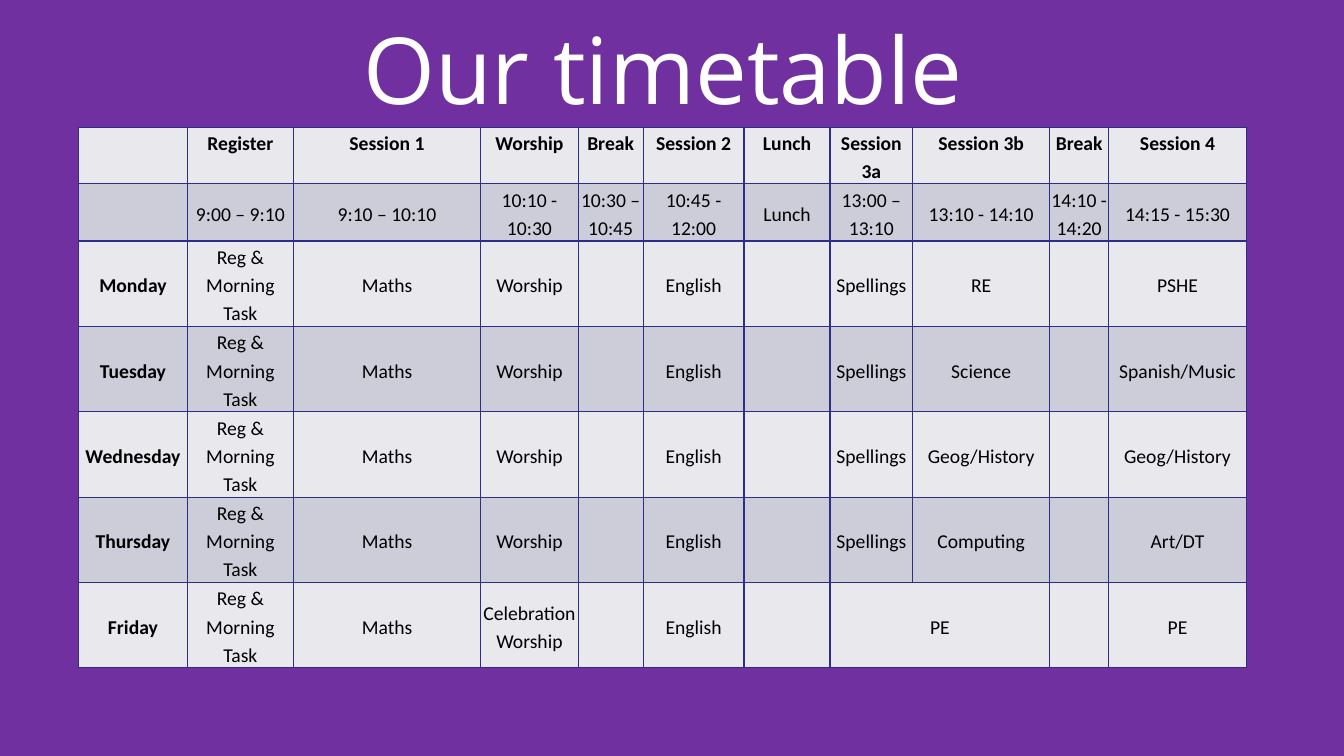
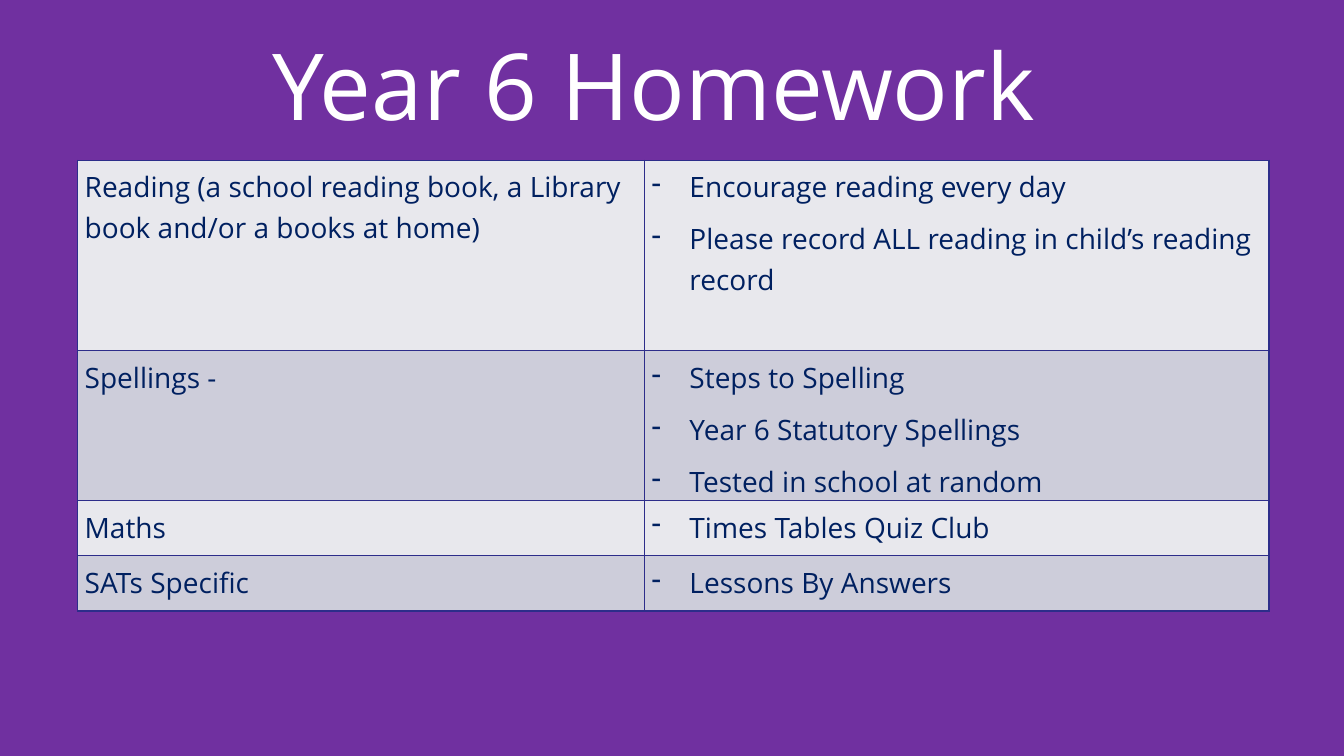
from dataclasses import dataclass

from lxml.etree import SubElement
from pptx import Presentation
from pptx.dml.color import RGBColor
from pptx.enum.text import MSO_ANCHOR, MSO_AUTO_SIZE, PP_ALIGN
from pptx.oxml.ns import qn
from pptx.presentation import Presentation as Deck
from pptx.slide import Slide
from pptx.table import Table, _Cell as Cell
from pptx.util import Pt

PURPLE, WHITE, BLACK, NAVY = "7030A0", "FFFFFF", "000000", "002060"
BORDER, BANDS = "2D2D8A", ("E8E8ED", "CDCDDA")
TITLE_FONT = "Open Sans"


@dataclass(frozen=True)
class CellStyle:
    """The text settings that all cells of one table share."""

    font: str
    size: float
    colour: str
    line_spacing: float
    space_after: float
    align: PP_ALIGN
    inset_side: float = 0
    inset_top: float = 0


@dataclass(frozen=True)
class Grid:
    """The place and the row and column sizes of a table."""

    left: float
    top: float
    columns: tuple[float, ...]
    rows: tuple[float, ...]


TIMETABLE_STYLE = CellStyle("Calibri", 14, BLACK, 1.18, 14, PP_ALIGN.CENTER)
HOMEWORK_STYLE = CellStyle("Open Sans", 20, NAVY, 1.07, 8, PP_ALIGN.LEFT, 5, 3.6)
TIMETABLE_GRID = Grid(
    56, 91,
    (78, 75.5, 134, 69.5, 46.5, 72, 61.5, 59, 98, 42, 98.5),
    (40.2, 41) + (61,) * 5,
)
HOMEWORK_GRID = Grid(55.5, 114.5, (405, 446), (136, 107, 39.5, 39.5))

HEADINGS = ["", "Register", "Session 1", "Worship", "Break", "Session 2", "Lunch",
            "Session 3a", "Session 3b", "Break", "Session 4"]
TIMES = ["", "9:00 – 9:10", "9:10 – 10:10", "10:10 - 10:30", "10:30 – 10:45",
         "10:45 - 12:00", "Lunch", "13:00 – 13:10", "13:10 - 14:10",
         "14:10 - 14:20", "14:15 - 15:30"]
DAYS = [
    ("Monday", "Worship", "Spellings", "RE", "PSHE"),
    ("Tuesday", "Worship", "Spellings", "Science", "Spanish/Music"),
    ("Wednesday", "Worship", "Spellings", "Geog/History", "Geog/History"),
    ("Thursday", "Worship", "Spellings", "Computing", "Art/DT"),
    ("Friday", "Celebration Worship", "PE", "", "PE"),
]
HOMEWORK = [
    ("Reading (a school reading book, a Library book and/or a books at home)",
     ["Encourage reading every day",
      "Please record ALL reading in child’s reading record"]),
    ("Spellings -",
     ["Steps to Spelling", "Year 6 Statutory Spellings", "Tested in school at random"]),
    ("Maths", ["Times Tables Quiz Club"]),
    ("SATs Specific", ["Lessons By Answers"]),
]


def rgb(colour: str) -> RGBColor:
    """Turn a hex string into a colour."""
    return RGBColor.from_string(colour)


def add_titled_slide(deck: Deck, title: str, left: float, top: float) -> Slide:
    """Add a slide with the shared large centred title."""
    page = deck.slides.add_slide(deck.slide_layouts[5])
    box = page.shapes.title
    box.left, box.top, box.width, box.height = Pt(left), Pt(top), Pt(719.5), Pt(97)
    frame = box.text_frame
    frame.text = title
    frame.auto_size = MSO_AUTO_SIZE.NONE
    frame.vertical_anchor = MSO_ANCHOR.MIDDLE
    para = frame.paragraphs[0]
    para.alignment = PP_ALIGN.CENTER
    para.font.name, para.font.size = TITLE_FONT, Pt(66)
    para.font.color.rgb = rgb(WHITE)
    return page


def add_borders(cell: Cell) -> None:
    """Draw a thin line along all four sides of a cell."""
    properties = cell._tc.get_or_add_tcPr()
    for side in ("lnL", "lnR", "lnT", "lnB"):
        line = SubElement(properties, qn(f"a:{side}"), w=str(int(Pt(1))))
        fill = SubElement(line, qn("a:solidFill"))
        SubElement(fill, qn("a:srgbClr"), val=BORDER)


def add_grid(page: Slide, grid: Grid) -> Table:
    """Add an empty table with borders and alternating row fills."""
    table = page.shapes.add_table(
        len(grid.rows), len(grid.columns), Pt(grid.left), Pt(grid.top),
        Pt(sum(grid.columns)), Pt(sum(grid.rows)),
    ).table
    table.first_row = table.horz_banding = False
    for column, width in zip(table.columns, grid.columns):
        column.width = Pt(width)
    for index, (row, height) in enumerate(zip(table.rows, grid.rows)):
        row.height = Pt(height)
        for cell in row.cells:
            add_borders(cell)
            cell.fill.solid()
            cell.fill.fore_color.rgb = rgb(BANDS[index % 2])
    return table


def write_cell(cell: Cell, lines: list[str], style: CellStyle, bold: bool = False,
               bullets: bool = False, anchor: MSO_ANCHOR = MSO_ANCHOR.TOP) -> None:
    """Write one paragraph for each line in a cell."""
    cell.margin_left = cell.margin_right = Pt(style.inset_side)
    cell.margin_top, cell.margin_bottom = Pt(style.inset_top), Pt(0)
    cell.vertical_anchor = anchor
    cell.text_frame.text = "\n".join(lines)
    for para in cell.text_frame.paragraphs:
        if bullets:
            properties = para._p.get_or_add_pPr()
            properties.set("marL", str(int(Pt(27))))
            properties.set("indent", str(int(Pt(-27))))
            SubElement(properties, qn("a:buChar"), char="-")
        para.alignment = style.align
        para.line_spacing = style.line_spacing
        para.space_after = Pt(style.space_after)
        para.font.name, para.font.size = style.font, Pt(style.size)
        para.font.bold = bold
        para.font.color.rgb = rgb(style.colour)


def add_timetable(deck: Deck) -> None:
    """Add the slide with the weekly timetable."""
    page = add_titled_slide(deck, "Our timetable", 114, 0)
    table = add_grid(page, TIMETABLE_GRID)
    lessons = [
        [day, "Reg & Morning Task", "Maths", worship, "", "English", "",
         session_3a, session_3b, "", session_4]
        for day, worship, session_3a, session_3b, session_4 in DAYS
    ]
    for row, texts in enumerate([HEADINGS, TIMES, *lessons]):
        anchor = MSO_ANCHOR.MIDDLE if row else MSO_ANCHOR.TOP
        for column, text in enumerate(texts):
            if text:
                write_cell(table.cell(row, column), [text], TIMETABLE_STYLE,
                           bold=row == 0 or column == 0, anchor=anchor)
    last_row = len(lessons) + 1
    table.cell(last_row, 7).merge(table.cell(last_row, 8))


def add_homework(deck: Deck) -> None:
    """Add the slide with the homework table."""
    page = add_titled_slide(deck, "Year 6 Homework", 107.5, 11)
    table = add_grid(page, HOMEWORK_GRID)
    for row, (subject, tasks) in enumerate(HOMEWORK):
        write_cell(table.cell(row, 0), [subject], HOMEWORK_STYLE)
        write_cell(table.cell(row, 1), tasks, HOMEWORK_STYLE, bullets=True)


def main() -> None:
    """Build and save the deck."""
    deck = Presentation()
    deck.slide_width, deck.slide_height = Pt(960), Pt(540)
    background = deck.slide_master.background.fill
    background.solid()
    background.fore_color.rgb = rgb(PURPLE)
    add_timetable(deck)
    add_homework(deck)
    deck.save("out.pptx")


if __name__ == "__main__":
    main()
